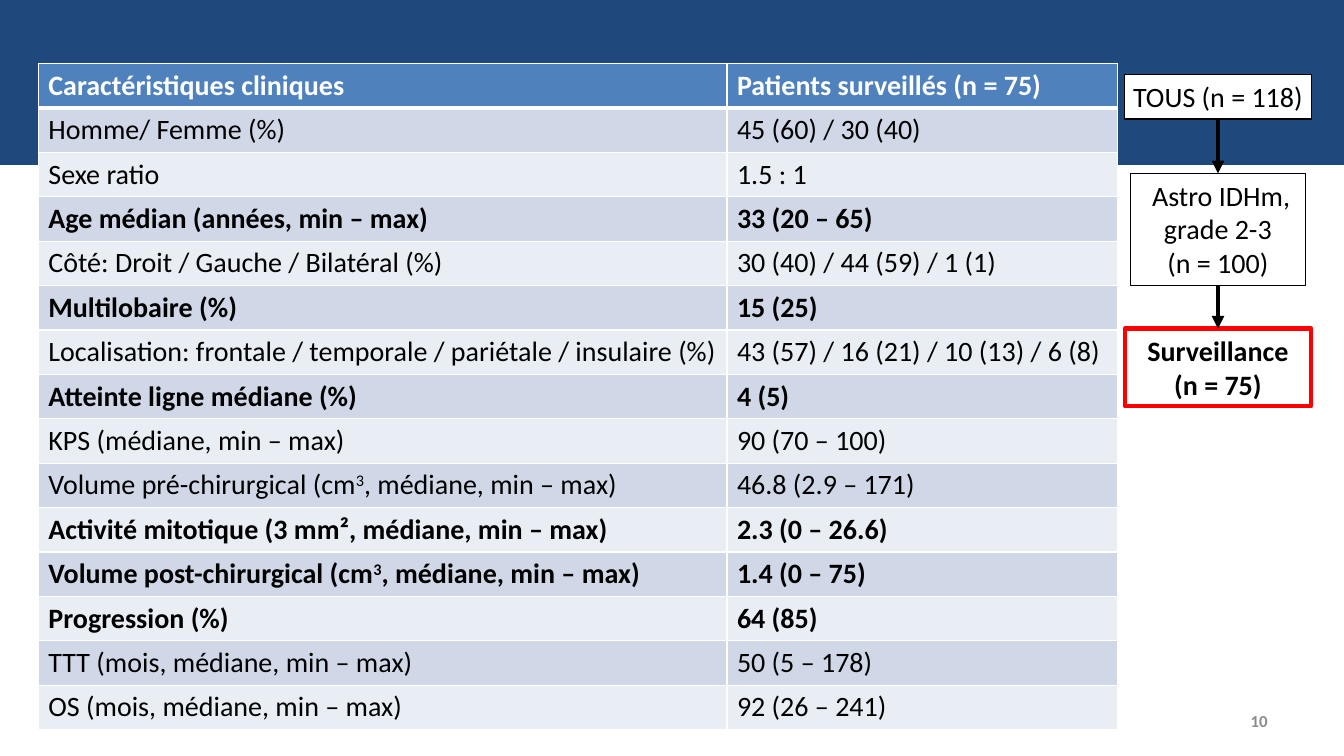
from dataclasses import dataclass

from lxml import etree
from pptx import Presentation
from pptx import util as u
from pptx.dml.color import RGBColor
from pptx.enum import shapes, text
from pptx.oxml import ns

FONT = "Calibri"
NAVY, BLUE, WHITE, BLACK = "1F497D", "4F81BD", "FFFFFF", "000000"
BANDS = ("D0D8E8", "E9EDF4")
FLOW_CENTER = 12.08


@dataclass
class Characteristic:
    label: str
    value: str
    bold: bool = False


@dataclass
class FlowStep:
    lines: tuple
    top: float
    width: float
    height: float
    outline: str = BLACK
    weight: float = 1
    bold: bool = False


HEADER = Characteristic("Caractéristiques cliniques", "Patients surveillés (n = 75)", True)
CHARACTERISTICS = [
    Characteristic("Homme/ Femme (%)", "45 (60) / 30 (40)"),
    Characteristic("Sexe ratio", "1.5 : 1"),
    Characteristic("Age médian (années, min – max)", "33 (20 – 65)", True),
    Characteristic("Côté: Droit / Gauche / Bilatéral (%)", "30 (40) / 44 (59) / 1 (1)"),
    Characteristic("Multilobaire (%)", "15 (25)", True),
    Characteristic("Localisation: frontale / temporale / pariétale / insulaire (%)",
                   "43 (57) / 16 (21) / 10 (13) / 6 (8)"),
    Characteristic("Atteinte ligne médiane (%)", "4 (5)", True),
    Characteristic("KPS (médiane, min – max)", "90 (70 – 100)"),
    Characteristic("Volume pré-chirurgical (cm³, médiane, min – max)", "46.8 (2.9 – 171)"),
    Characteristic("Activité mitotique (3 mm², médiane, min – max)", "2.3 (0 – 26.6)", True),
    Characteristic("Volume post-chirurgical (cm³, médiane, min – max)", "1.4 (0 – 75)", True),
    Characteristic("Progression (%)", "64 (85)", True),
    Characteristic("TTT (mois, médiane, min – max)", "50 (5 – 178)"),
    Characteristic("OS (mois, médiane, min – max)", "92 (26 – 241)"),
]
FLOW = [
    FlowStep(("TOUS (n = 118)",), 0.74, 1.85, 0.44),
    FlowStep((" Astro IDHm, grade 2-3", "(n = 100)"), 1.72, 1.74, 1.11),
    FlowStep(("Surveillance", "(n = 75)"), 3.26, 1.85, 0.77, "FF0000", 3, True),
]


def color(value: str) -> RGBColor:
    return RGBColor.from_string(value)


def add_run(paragraph, wording: str, size: float = 20, ink: str = BLACK,
            bold: bool = False, raised: bool = False) -> None:
    run = paragraph.add_run()
    run.text = wording
    run.font.name, run.font.size, run.font.bold = FONT, u.Pt(size), bold
    run.font.color.rgb = color(ink)
    if raised:
        run._r.get_or_add_rPr().set("baseline", "30000")


def add_box(slide, left: float, top: float, width: float, height: float,
            fill: str, outline: str, weight: float):
    box = slide.shapes.add_shape(shapes.MSO_SHAPE.RECTANGLE, u.Inches(left), u.Inches(top),
                                 u.Inches(width), u.Inches(height))
    box.shadow.inherit = False
    box.fill.solid()
    box.fill.fore_color.rgb = color(fill)
    box.line.color.rgb = color(outline)
    box.line.width = u.Pt(weight)
    return box


def set_borders(cell, top: float, bottom: float) -> None:
    properties = cell._tc.get_or_add_tcPr()
    for place, (side, weight) in enumerate(
            (("lnL", 1), ("lnR", 1), ("lnT", top), ("lnB", bottom))):
        edge = etree.Element(ns.qn(f"a:{side}"), w=str(u.Pt(weight)))
        paint = etree.SubElement(edge, ns.qn("a:solidFill"))
        etree.SubElement(paint, ns.qn("a:srgbClr"), val=WHITE)
        properties.insert(place, edge)


def add_characteristics(slide) -> None:
    rows = [HEADER, *CHARACTERISTICS]
    row_height = 0.44
    table = slide.shapes.add_table(len(rows), 2, u.Inches(0.38), u.Inches(0.63),
                                   u.Inches(10.7), u.Inches(row_height * len(rows))).table
    for column, width in zip(table.columns, (6.83, 3.87)):
        column.width = u.Inches(width)
    for index, row in enumerate(rows):
        table.rows[index].height = u.Inches(row_height)
        is_header = index == 0
        for column, wording in enumerate((row.label, row.value)):
            cell = table.cell(index, column)
            cell.fill.solid()
            cell.fill.fore_color.rgb = color(BLUE if is_header else BANDS[(index - 1) % 2])
            set_borders(cell, 3 if index == 1 else 1, 3 if is_header else 1)
            paragraph = cell.text_frame.paragraphs[0]
            ink = WHITE if is_header else BLACK
            before, cube, after = wording.partition("³")
            add_run(paragraph, before, ink=ink, bold=row.bold)
            if cube:
                add_run(paragraph, "3", ink=ink, bold=row.bold, raised=True)
                add_run(paragraph, after, ink=ink, bold=row.bold)


def add_step(slide, step: FlowStep):
    box = add_box(slide, FLOW_CENTER - step.width / 2, step.top, step.width, step.height,
                  WHITE, step.outline, step.weight)
    frame = box.text_frame
    frame.word_wrap = True
    frame.vertical_anchor = text.MSO_ANCHOR.TOP
    frame.margin_left = frame.margin_right = u.Inches(0.05)
    frame.margin_top = frame.margin_bottom = u.Inches(0.05)
    for index, wording in enumerate(step.lines):
        paragraph = frame.add_paragraph() if index else frame.paragraphs[0]
        paragraph.alignment = text.PP_ALIGN.CENTER
        add_run(paragraph, wording, bold=step.bold)
    return box


def add_arrow(slide, source, target) -> None:
    arrow = slide.shapes.add_connector(shapes.MSO_CONNECTOR.STRAIGHT, 0, 0, 0, 0)
    arrow.begin_connect(source, 2)
    arrow.end_connect(target, 0)
    arrow.line.color.rgb = color(BLACK)
    arrow.line.width = u.Pt(3)
    etree.SubElement(arrow.line._get_or_add_ln(), ns.qn("a:tailEnd"), type="triangle")
    etree.SubElement(arrow._element.spPr, ns.qn("a:effectLst"))


def add_page_number(slide) -> None:
    frame = slide.shapes.add_textbox(u.Inches(9.56), u.Inches(6.95),
                                     u.Inches(3.11), u.Inches(0.4)).text_frame
    frame.word_wrap = True
    frame.vertical_anchor = text.MSO_ANCHOR.MIDDLE
    paragraph = frame.paragraphs[0]
    paragraph.alignment = text.PP_ALIGN.RIGHT
    add_run(paragraph, "10", 12, "8C8C8C", True)


def main() -> None:
    deck = Presentation()
    deck.slide_width, deck.slide_height = u.Inches(13.33), u.Inches(7.5)
    slide = deck.slides.add_slide(deck.slide_layouts[6])
    add_box(slide, 0, 0, 13.33, 1.62, NAVY, NAVY, 2)
    add_characteristics(slide)
    add_page_number(slide)
    steps = [add_step(slide, step) for step in FLOW]
    for source, target in zip(steps, steps[1:]):
        add_arrow(slide, source, target)
    deck.save("out.pptx")


if __name__ == "__main__":
    main()
